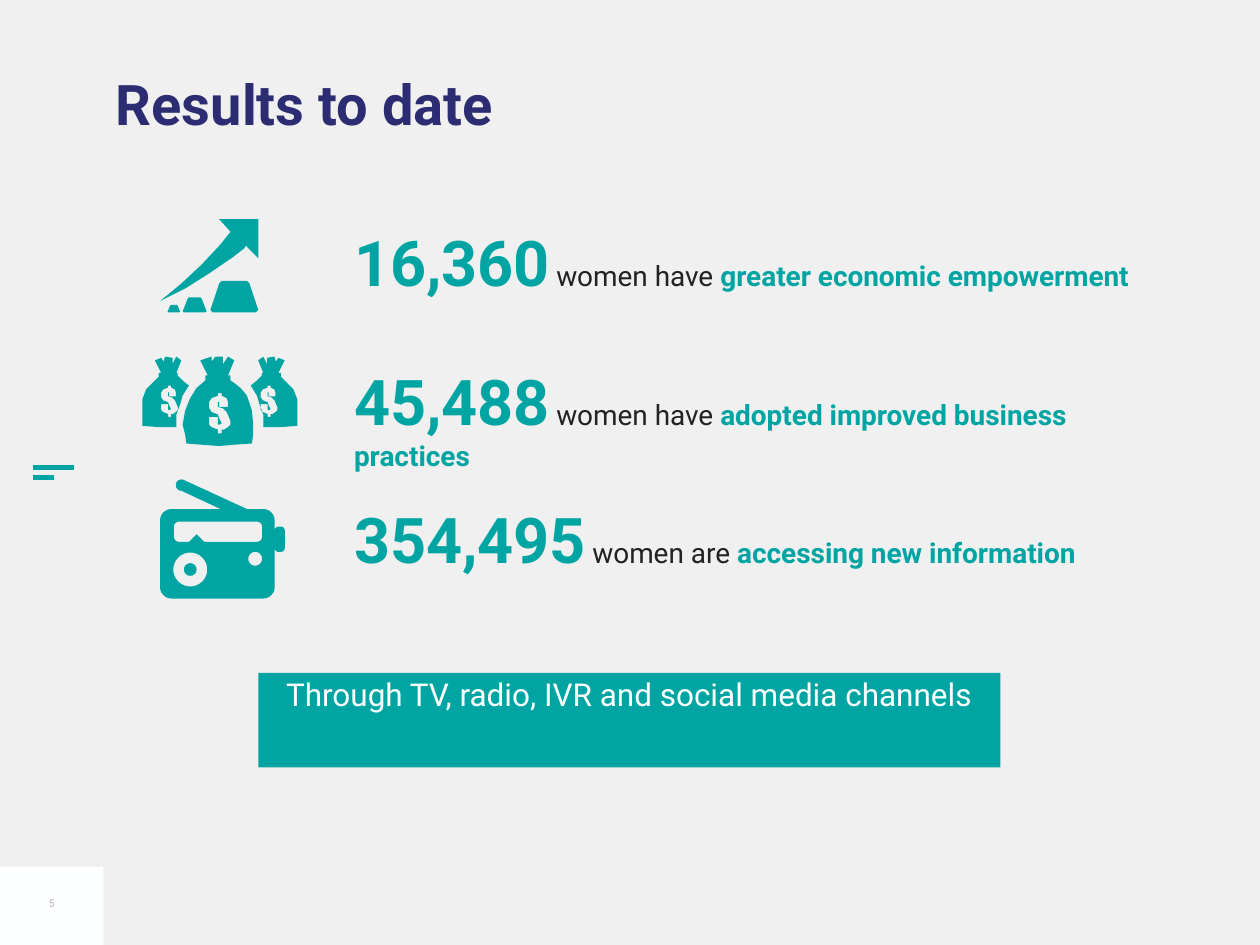
from dataclasses import dataclass
from math import cos, pi, sin

from lxml import etree
from pptx import Presentation
from pptx.dml.color import RGBColor
from pptx.enum.shapes import MSO_CONNECTOR, MSO_SHAPE
from pptx.enum.text import MSO_ANCHOR, MSO_AUTO_SIZE, PP_ALIGN
from pptx.oxml.ns import qn
from pptx.util import Inches, Pt

TOP, MIDDLE = MSO_ANCHOR.TOP, MSO_ANCHOR.MIDDLE
LEFT, CENTER = PP_ALIGN.LEFT, PP_ALIGN.CENTER
NO_AUTOFIT = MSO_AUTO_SIZE.NONE
STRAIGHT, RECTANGLE = MSO_CONNECTOR.STRAIGHT, MSO_SHAPE.RECTANGLE
NO_STYLE_NO_GRID = "{2D5ABB26-0587-4C30-8999-92F81FD0307C}"
SUBUNITS = 100


@dataclass(frozen=True)
class Theme:
    font: str = "Roboto"
    paper: str = "F0F0F0"
    teal: str = "00A5A3"
    navy: str = "2B2C71"
    ink: str = "222222"
    white: str = "FEFFFF"
    grey: str = "B4B4B4"
    title: int = 32
    figure: int = 36
    gap: int = 14
    text: int = 16
    banner: int = 18
    number: int = 6


@dataclass(frozen=True)
class Box:
    left: float
    top: float
    width: float
    height: float

    def emu(self):
        return [Inches(v) for v in (self.left, self.top, self.width, self.height)]


THEME = Theme()
RESULTS = [
    ("16,360", "women have ", "greater economic empowerment"),
    ("45,488", "women have ", "adopted improved business practices"),
    ("354,495", "women are ", "accessing new information"),
]
DOLLAR = [(15, 11), (8, 11), (8, 7), (7, 7), (7, 11), (11, 12), (14, 15), (17, 22), (17, 25),
          (15, 27), (12, 29), (10, 29), (10, 32), (7, 32), (7, 29), (2, 27), (0, 25), (0, 19),
          (7, 19), (7, 25), (8, 25), (10, 24), (8, 20), (7, 17), (2, 15), (0, 12), (0, 7),
          (2, 4), (7, 2), (7, 0), (10, 0), (10, 2), (14, 4), (15, 7)]
SIDE_BAG = [(28, 15), (32, 19), (37, 23), (32, 31), (30, 38), (27, 46), (27, 56), (13, 56),
            (0, 55), (0, 43), (0, 34), (3, 26), (8, 21), (13, 16), (13, 13), (15, 13), (10, 3),
            (15, 1), (17, 4), (18, 0), (24, 1), (24, 6), (27, 0), (31, 3), (27, 13), (28, 13)]
FRONT_BAG = [(70, 19), (70, 15), (68, 15), (73, 3), (68, 0), (64, 6), (64, 0), (58, 0), (55, 4),
             (55, 0), (46, 3), (52, 15), (50, 15), (50, 19), (43, 25), (38, 33), (34, 43),
             (32, 54), (34, 62), (35, 69), (47, 70), (61, 71), (73, 70), (87, 69), (88, 62),
             (88, 54), (87, 43), (83, 31), (78, 25), (73, 21)]
ARROW = [(47, 0), (56, 10), (48, 20), (33, 36), (17, 51), (0, 65), (20, 55), (39, 43),
         (58, 30), (67, 23), (68, 21), (78, 31), (78, 0)]


def color(value):
    return RGBColor.from_string(value)


def add_run(paragraph, text, *, size, ink, bold=False):
    run = paragraph.add_run()
    run.text = text
    run.font.name = THEME.font
    run.font.size = Pt(size)
    run.font.bold = bold
    run.font.color.rgb = color(ink)


def format_frame(frame, *, anchor=TOP, align=LEFT, insets=(0.1, 0, 0, 0)):
    frame.word_wrap = True
    frame.auto_size = NO_AUTOFIT
    frame.vertical_anchor = anchor
    (frame.margin_left, frame.margin_top,
     frame.margin_right, frame.margin_bottom) = [Inches(v) for v in insets]
    paragraph = frame.paragraphs[0]
    paragraph.alignment = align
    paragraph.space_before = Pt(0)
    return paragraph


def place(placeholder, box):
    placeholder.left, placeholder.top, placeholder.width, placeholder.height = box.emu()


def paint(shape, fill):
    shape.shadow.inherit = False
    shape.fill.solid()
    shape.fill.fore_color.rgb = color(fill)
    shape.line.fill.background()


def arc(cx, cy, radius, start=0, sweep=2 * pi, steps=32):
    return [(cx + radius * cos(start + sweep * i / steps),
             cy + radius * sin(start + sweep * i / steps)) for i in range(steps + 1)]


def rounded(left, top, width, height, r):
    right, bottom = left + width, top + height
    corners = [(right - r, bottom - r), (left + r, bottom - r), (left + r, top + r), (right - r, top + r)]
    return [point for i, (x, y) in enumerate(corners)
            for point in arc(x, y, r, i * pi / 2, pi / 2, 6)]


def trapezoid(left, top, right, bottom, inset, cut):
    return [(left + inset + cut, top), (right - inset - cut, top), (right - inset, top + cut),
            (right, bottom - cut), (right - cut, bottom), (left + cut, bottom),
            (left, bottom - cut), (left + inset, top + cut)]


def dollar(left, top, scale):
    return [(left + x * scale, top + y * scale) for x, y in DOLLAR]


def add_icon(slide, box, grid, contours):
    left, top, width, height = box.emu()
    scale = (width / grid[0] / SUBUNITS, height / grid[1] / SUBUNITS)
    fine = [[(x * SUBUNITS, y * SUBUNITS) for x, y in contour] for contour in contours]
    builder = slide.shapes.build_freeform(*fine[0][0], scale=scale)
    for i, contour in enumerate(fine):
        if i:
            builder.move_to(*contour[0])
        builder.add_line_segments(contour[1:], close=True)
    paint(builder.convert_to_shape(left, top), THEME.teal)


def growth_icon(slide, box):
    blocks = [trapezoid(6, 68, 16, 74, 2, 0.7), trapezoid(18, 62, 37, 74, 4, 1),
              trapezoid(40, 49, 78, 74, 7, 2)]
    add_icon(slide, box, (78, 74), [ARROW, *blocks])


def money_icon(slide, box):
    mirrored_bag = [(123 - x, y) for x, y in SIDE_BAG]
    add_icon(slide, box, (123, 71), [SIDE_BAG, mirrored_bag, FRONT_BAG, dollar(53, 29, 1),
                                     dollar(15, 23, 0.78), dollar(94, 23, 0.78)])


def radio_icon(slide, box):
    antenna = [(69, 24), *arc(17, 5, 4.5, 1.65 * pi, -1.15 * pi, 12), (48, 24)]
    body, handle = rounded(0, 24, 91, 71, 9), rounded(91, 38, 8, 20, 3)
    window, needle = rounded(11, 34, 70, 16, 4), [(23, 50), (29, 44), (35, 50)]
    dials = [arc(24, 72, 13.5), arc(24, 72, 5), arc(75.5, 63.5, 5.5)]
    add_icon(slide, box, (99, 95), [body, antenna, handle, window, needle, *dials])


def add_title(slide, box):
    title = slide.shapes.title
    place(title, box)
    paragraph = format_frame(title.text_frame)
    paragraph.line_spacing = 0.9
    add_run(paragraph, "Results to date", size=THEME.title, ink=THEME.navy, bold=True)


def add_banner(slide, box):
    banner = slide.placeholders[1]
    place(banner, box)
    banner.fill.solid()
    banner.fill.fore_color.rgb = color(THEME.teal)
    paragraph = format_frame(banner.text_frame, insets=(0.1, 0.02, 0, 0))
    properties = paragraph._p.get_or_add_pPr()
    properties.set("marL", str(Inches(0.12)))
    properties.set("indent", "0")
    etree.SubElement(properties, qn("a:buNone"))
    add_run(paragraph, "Through TV, radio, IVR and social media channels",
            size=THEME.banner, ink=THEME.white)


def add_results(slide, box):
    table = slide.shapes.add_table(len(RESULTS), 1, *box.emu()).table
    table.first_row = table.horz_banding = False
    table._tbl.tblPr.find(qn("a:tableStyleId")).text = NO_STYLE_NO_GRID
    for row, (figure, lead, outcome) in enumerate(RESULTS):
        cell = table.cell(row, 0)
        cell.fill.background()
        paragraph = cell.text_frame.paragraphs[0]
        add_run(paragraph, figure, size=THEME.figure, ink=THEME.teal, bold=True)
        add_run(paragraph, " ", size=THEME.gap, ink=THEME.ink)
        add_run(paragraph, lead, size=THEME.text, ink=THEME.ink)
        add_run(paragraph, outcome, size=THEME.text, ink=THEME.teal, bold=True)


def add_page_number(slide, box):
    paint(slide.shapes.add_shape(RECTANGLE, *box.emu()), THEME.white)
    label = Box(box.left, box.top + 0.09, box.width, 0.4)
    frame = slide.shapes.add_textbox(*label.emu()).text_frame
    paragraph = format_frame(frame, anchor=MIDDLE, align=CENTER, insets=(0.07, 0.04, 0.07, 0.04))
    add_run(paragraph, "5", size=THEME.number, ink=THEME.grey)


def add_margin_mark(slide, box):
    for share, y in ((1, box.top), (0.5, box.top + box.height)):
        stroke = slide.shapes.add_connector(
            STRAIGHT, Inches(box.left), Inches(y), Inches(box.left + box.width * share), Inches(y))
        stroke.line.color.rgb = color(THEME.teal)
        stroke.line.width = Pt(3)
        etree.SubElement(stroke._element.spPr, qn("a:effectLst"))


def main():
    deck = Presentation()
    deck.slide_width, deck.slide_height = Inches(10), Inches(7.5)
    slide = deck.slides.add_slide(deck.slide_layouts[1])
    slide.background.fill.solid()
    slide.background.fill.fore_color.rgb = color(THEME.paper)
    add_page_number(slide, Box(0, 6.88, 0.82, 0.62))
    add_margin_mark(slide, Box(0.26, 3.71, 0.33, 0.08))
    add_title(slide, Box(0.82, 0.61, 8.34, 1.36))
    add_banner(slide, Box(2.05, 5.34, 5.89, 0.75))
    add_results(slide, Box(2.71, 1.76, 6.78, 3.3))
    growth_icon(slide, Box(1.27, 1.74, 0.78, 0.74))
    money_icon(slide, Box(1.13, 2.83, 1.23, 0.71))
    radio_icon(slide, Box(1.27, 3.8, 0.99, 0.95))
    deck.save("out.pptx")


if __name__ == "__main__":
    main()
